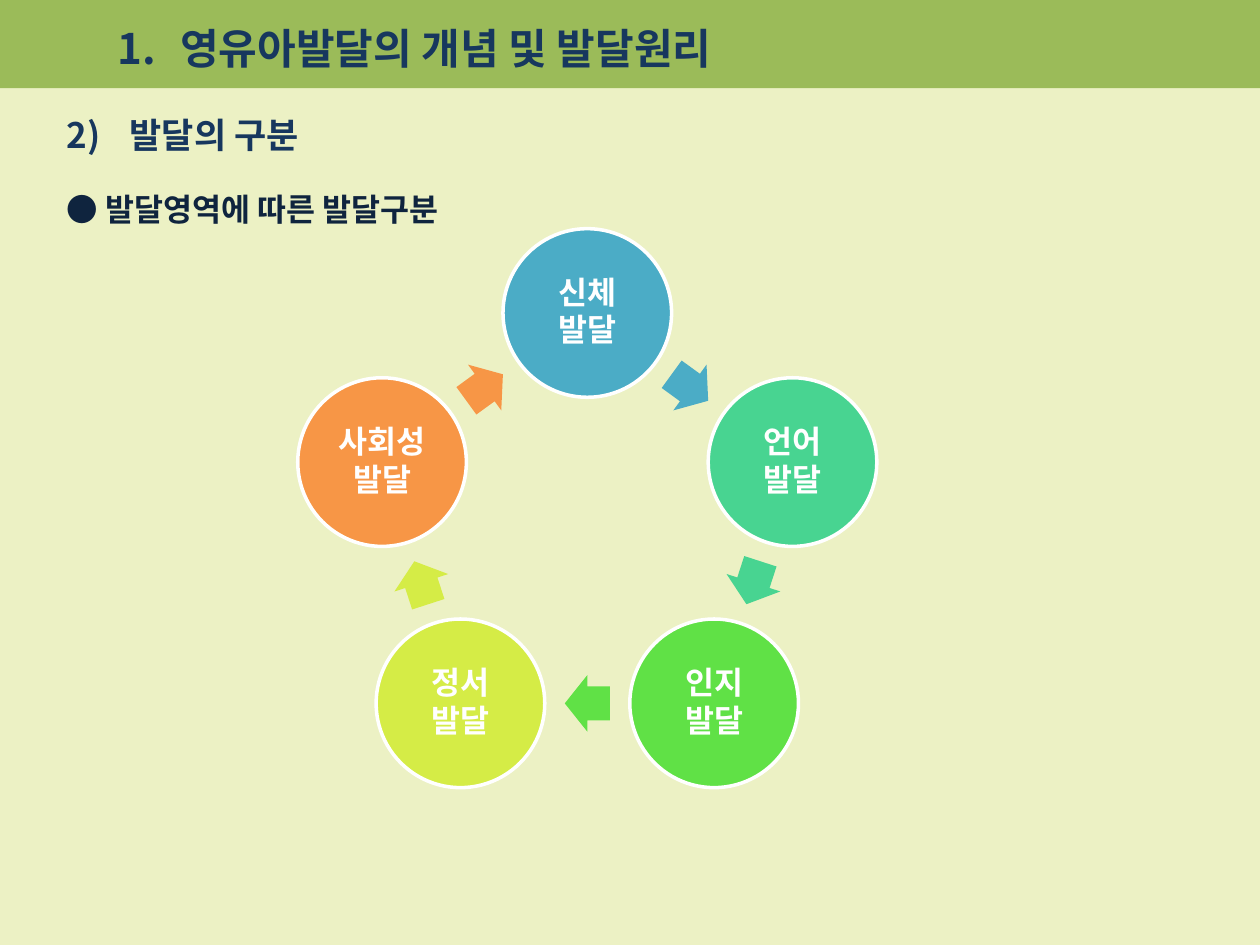
import math
from lxml import etree
from pptx import Presentation, util as u
from pptx.dml.color import RGBColor
from pptx.enum import shapes, text
from pptx.oxml.ns import qn

FONT = "Noto Sans CJK KR"
COLOR = {
    "ground": "ECF1C4", "band": "9BBB59", "navy": "17375E",
    "dark": "0F243E", "white": "FFFFFF",
}
STAGES = [
    ("신체", "4BACC6", "Arial"),
    ("언어", "48D491", FONT),
    ("인지", "60E146", FONT),
    ("정서", "D5EC46", FONT),
    ("사회성", "F79646", "Arial"),
]
MID_X, MID_Y, RING = 11.84, 10.66, 4.35
DISC = 3.4
STEP = 360 / len(STAGES)


def write(para, words, size=18, color="white", bold=True, face=FONT):
    run = para.add_run()
    run.text = words
    font = run.font
    font.size, font.bold, font.name = u.Pt(size), bold, face
    font.color.rgb = RGBColor.from_string(COLOR[color])
    east = etree.SubElement(font._element, qn("a:ea"))
    east.set("typeface", FONT)


def set_line(holder, box, tab=None):
    """Place a text placeholder and return its plain, left-set paragraph."""
    holder.left, holder.top, holder.width, holder.height = map(u.Cm, box)
    frame = holder.text_frame
    frame.auto_size = text.MSO_AUTO_SIZE.NONE
    frame.vertical_anchor = text.MSO_ANCHOR.TOP
    frame.word_wrap = True
    para = frame.paragraphs[0]
    para.alignment = text.PP_ALIGN.LEFT
    para.space_before = u.Pt(0)
    props = para._p.get_or_add_pPr()
    props.set("marL", "0")
    props.set("indent", "0")
    etree.SubElement(props, qn("a:buNone"))
    if tab:
        stops = etree.SubElement(props, qn("a:tabLst"))
        etree.SubElement(stops, qn("a:tab"), pos=str(u.Cm(tab)), algn="l")
    return para


def add_form(slide, kind, box, fill):
    form = slide.shapes.add_shape(kind, *map(u.Cm, box))
    form.shadow.inherit = False
    form.fill.solid()
    form.fill.fore_color.rgb = RGBColor.from_string(fill)
    form.line.fill.background()
    return form


def ring_point(turn, radius):
    """Point on the ring, with the angle in degrees clockwise from the top."""
    angle = math.radians(turn)
    return MID_X + radius * math.sin(angle), MID_Y - radius * math.cos(angle)


def add_disc(slide, turn, label, fill, face):
    x, y = ring_point(turn, RING)
    box = (x - DISC / 2, y - DISC / 2, DISC, DISC)
    disc = add_form(slide, shapes.MSO_SHAPE.OVAL, box, fill)
    disc.line.color.rgb = RGBColor.from_string(COLOR["white"])
    disc.line.width = u.Pt(2)
    frame = disc.text_frame
    frame.margin_left = frame.margin_right = u.Cm(0.08)
    frame.margin_top = frame.margin_bottom = u.Cm(0.08)
    frame.vertical_anchor = text.MSO_ANCHOR.MIDDLE
    frame.word_wrap = True
    for para, words in ((frame.paragraphs[0], label),
                        (frame.add_paragraph(), "발달")):
        para.alignment = text.PP_ALIGN.CENTER
        para.line_spacing = 0.9
        para.space_after = u.Pt(2)
        write(para, words, face=face)


def add_arrow(slide, turn, fill, wide=0.91, high=1.14):
    """Point clockwise from the middle between two discs."""
    x, y = ring_point(turn, RING * math.cos(math.radians(STEP / 2)))
    box = (x - wide / 2, y - high / 2, wide, high)
    arrow = add_form(slide, shapes.MSO_SHAPE.RIGHT_ARROW, box, fill)
    arrow.adjustments[0], arrow.adjustments[1] = 0.6, 0.5
    arrow.rotation = turn


def main():
    deck = Presentation()
    deck.slide_width, deck.slide_height = u.Cm(25.4), u.Cm(19.05)
    slide = deck.slides.add_slide(deck.slide_layouts[3])
    ground = slide.background.fill
    ground.solid()
    ground.fore_color.rgb = RGBColor.from_string(COLOR["ground"])

    band = add_form(slide, shapes.MSO_SHAPE.RECTANGLE,
                    (0, 0, 25.4, 1.78), COLOR["band"])
    slide.shapes._spTree.insert(2, band._element)

    title, head, topic = slide.placeholders
    para = set_line(title, (2.11, 0.33, 16.21, 1.27), tab=1.14)
    write(para, "1.\t영유아발달의 개념 및 발달원리", size=24, color="navy")
    para = set_line(head, (1.09, 2.16, 16.21, 1.12), tab=0.99)
    write(para, "2)\t발달의 구분", size=20, color="navy")
    para = set_line(topic, (1.09, 3.33, 21.46, 1.42))
    para.line_spacing = 1.5
    write(para, "● ", color="dark", bold=False)
    write(para, "발달영역에 따른 발달구분", color="dark")

    for i, (label, fill, face) in enumerate(STAGES):
        add_disc(slide, i * STEP, label, fill, face)
        add_arrow(slide, (i + 0.5) * STEP, fill)
    deck.save("out.pptx")


if __name__ == "__main__":
    main()
